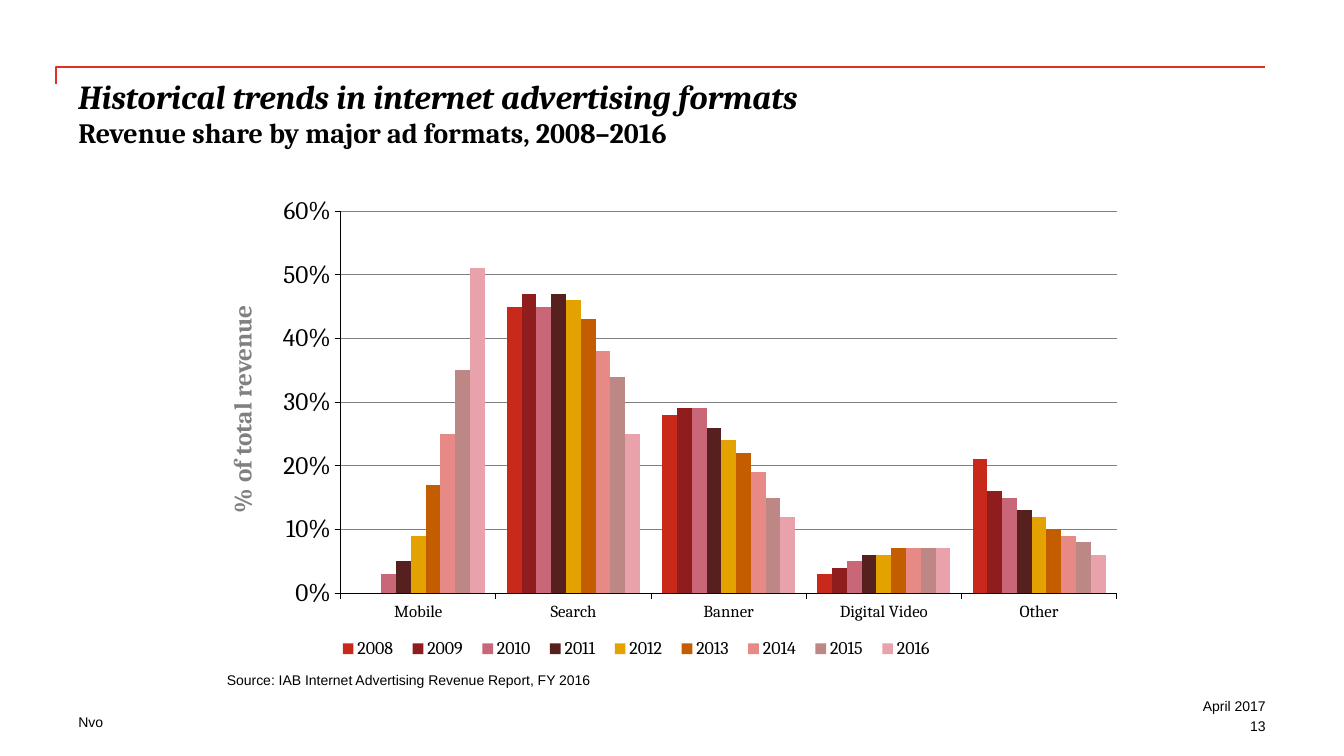
from dataclasses import dataclass

from lxml import etree
from pptx import Presentation
from pptx.chart.data import CategoryChartData
from pptx.dml.color import RGBColor
from pptx.enum.chart import XL_CHART_TYPE, XL_LEGEND_POSITION, XL_TICK_MARK
from pptx.enum.text import MSO_ANCHOR, PP_ALIGN
from pptx.oxml import parse_xml
from pptx.oxml.ns import nsdecls
from pptx.util import Emu, Inches, Pt

COLUMNS, ROWS = 160, 90
CELL = Inches(1 / 12)

BLACK = RGBColor(0x00, 0x00, 0x00)
GRAY = RGBColor(0x80, 0x80, 0x80)
RED = RGBColor(0xE0, 0x30, 0x1E)

LEFT, CENTER, RIGHT = PP_ALIGN.LEFT, PP_ALIGN.CENTER, PP_ALIGN.RIGHT
TOP, BOTTOM = MSO_ANCHOR.TOP, MSO_ANCHOR.BOTTOM
CLUSTERED = XL_CHART_TYPE.COLUMN_CLUSTERED
LEGEND_BOTTOM = XL_LEGEND_POSITION.BOTTOM
TICK_OUTSIDE, TICK_NONE = XL_TICK_MARK.OUTSIDE, XL_TICK_MARK.NONE


@dataclass(frozen=True)
class Area:
    """A rectangle in grid columns and rows."""
    column: float
    row: float
    width: float
    height: float

    def emu(self) -> list[Emu]:
        return [cells(n) for n in (self.column, self.row, self.width, self.height)]


@dataclass(frozen=True)
class Span:
    text: str
    size: float
    italic: bool = False


@dataclass(frozen=True)
class Label:
    area: Area
    spans: tuple[Span, ...]
    font: str = "Arial"
    color: RGBColor = BLACK
    bold: bool = False
    align: PP_ALIGN = LEFT
    anchor: MSO_ANCHOR = TOP
    rotation: float = 0


@dataclass(frozen=True)
class YearShares:
    year: str
    color: RGBColor
    shares: tuple[float | None, ...]


LABELS = (
    Label(Area(9.33, 9, 141.25, 12),
          (Span("Historical trends in internet advertising formats", 24, True),
           Span("Revenue share by major ad formats, 2008–2016", 20)),
          font="Cambria", bold=True),
    Label(Area(13, 46.7, 31.9, 4), (Span("% of total revenue", 18),),
          font="Cambria", color=GRAY, bold=True, align=CENTER, rotation=270),
    Label(Area(27, 80, 69, 2),
          (Span("Source: IAB Internet Advertising Revenue Report, FY 2016", 10),),
          anchor=BOTTOM),
    Label(Area(9.33, 85, 45.33, 2), (Span("Nvo", 10),)),
    Label(Area(124, 83, 26.67, 2), (Span("April 2017", 10),), align=RIGHT),
    Label(Area(124, 85.4, 26.67, 2), (Span("13", 10),), align=RIGHT),
)

RULE_POINTS = ((6.67, 10), (6.67, 8), (150.6, 8))

CHART_AREA = Area(27, 23, 106, 58)
PLOT_LAYOUT = (0.128, 0.037, 0.872, 0.784)
LEGEND_LAYOUT = (0.115, 0.9, 0.69, 0.07)
FORMATS = ("Mobile", "Search", "Banner", "Digital Video", "Other")
YEARS = (
    YearShares("2008", RGBColor(0xC8, 0x29, 0x1B), (None, 0.45, 0.28, 0.03, 0.21)),
    YearShares("2009", RGBColor(0x90, 0x1D, 0x1D), (None, 0.47, 0.29, 0.04, 0.16)),
    YearShares("2010", RGBColor(0xC9, 0x66, 0x78), (0.03, 0.45, 0.29, 0.05, 0.15)),
    YearShares("2011", RGBColor(0x55, 0x20, 0x1D), (0.05, 0.47, 0.26, 0.06, 0.13)),
    YearShares("2012", RGBColor(0xE3, 0xA2, 0x00), (0.09, 0.46, 0.24, 0.06, 0.12)),
    YearShares("2013", RGBColor(0xC4, 0x5D, 0x00), (0.17, 0.43, 0.22, 0.07, 0.10)),
    YearShares("2014", RGBColor(0xE7, 0x8A, 0x85), (0.25, 0.38, 0.19, 0.07, 0.09)),
    YearShares("2015", RGBColor(0xBD, 0x87, 0x85), (0.35, 0.34, 0.15, 0.07, 0.08)),
    YearShares("2016", RGBColor(0xE9, 0xA2, 0xAB), (0.51, 0.25, 0.12, 0.07, 0.06)),
)


def cells(count: float) -> Emu:
    return Emu(round(count * CELL))


def set_font(font, name: str, size: float) -> None:
    font.name, font.size = name, Pt(size)
    font.color.rgb = BLACK


def add_label(page, label: Label) -> None:
    box = page.shapes.add_textbox(*label.area.emu())
    box.rotation = label.rotation
    frame = box.text_frame
    frame.word_wrap = True
    frame.vertical_anchor = label.anchor
    frame.margin_left = frame.margin_right = frame.margin_top = frame.margin_bottom = 0
    para = frame.paragraphs[0]
    para.alignment = label.align
    para.font.name, para.font.bold = label.font, label.bold
    para.font.color.rgb = label.color
    for index, span in enumerate(label.spans):
        if index:
            para.add_line_break()
        run = para.add_run()
        run.text = span.text
        run.font.size, run.font.italic = Pt(span.size), span.italic


def add_corner_rule(page) -> None:
    start, *rest = [(cells(x), cells(y)) for x, y in RULE_POINTS]
    builder = page.shapes.build_freeform(*start)
    builder.add_line_segments(rest, close=False)
    rule = builder.convert_to_shape()
    rule.shadow.inherit = False
    rule.fill.background()
    rule.line.color.rgb = RED
    rule.line.width = Pt(1)


def layout_xml(shares: tuple[float, ...], inner: bool) -> etree.ElementBase:
    """Manual chart layout: left, top, width, height as shares of the chart."""
    target = '<c:layoutTarget val="inner"/>' if inner else ""
    modes = '<c:xMode val="edge"/><c:yMode val="edge"/>'
    sizes = "".join(f'<c:{tag} val="{share}"/>' for tag, share in zip("xywh", shares))
    return parse_xml(f'<c:layout {nsdecls("c")}><c:manualLayout>{target}{modes}{sizes}'
                     "</c:manualLayout></c:layout>")


def style_axis(axis, size: float) -> None:
    axis.major_tick_mark, axis.minor_tick_mark = TICK_OUTSIDE, TICK_NONE
    axis.format.line.color.rgb = BLACK
    axis.format.line.width = Pt(0.75)
    set_font(axis.tick_labels.font, "Cambria", size)


def add_share_chart(page) -> None:
    data = CategoryChartData(number_format="0%")
    data.categories = FORMATS
    for entry in YEARS:
        data.add_series(entry.year, entry.shares)
    chart = page.shapes.add_chart(CLUSTERED, *CHART_AREA.emu(), data).chart
    chart.has_title = False
    set_font(chart.font, "Arial", 14)

    plot = chart.plots[0]
    plot.gap_width, plot.overlap = 150, 0
    plot.vary_by_categories = False
    for series, entry in zip(plot.series, YEARS):
        series.format.fill.solid()
        series.format.fill.fore_color.rgb = entry.color

    style_axis(chart.category_axis, 12)
    values = chart.value_axis
    style_axis(values, 18)
    values.minimum_scale, values.maximum_scale, values.major_unit = 0, 0.6, 0.1
    values.tick_labels.number_format = "0%"
    values.tick_labels.number_format_is_linked = False
    values.major_gridlines.format.line.color.rgb = GRAY
    values.major_gridlines.format.line.width = Pt(0.75)

    chart.has_legend = True
    legend = chart.legend
    legend.position, legend.include_in_layout = LEGEND_BOTTOM, False
    set_font(legend.font, "Cambria", 12.8)

    area = chart.element.chart.plotArea
    for old in area.findall("{*}layout"):
        area.remove(old)
    area.insert(0, layout_xml(PLOT_LAYOUT, True))
    legend_xml = chart.element.chart.find("{*}legend")
    for old in legend_xml.findall("{*}layout"):
        legend_xml.remove(old)
    legend_xml.find("{*}legendPos").addnext(layout_xml(LEGEND_LAYOUT, False))


def main() -> None:
    deck = Presentation()
    deck.slide_width, deck.slide_height = cells(COLUMNS), cells(ROWS)
    page = deck.slides.add_slide(deck.slide_layouts[6])
    add_corner_rule(page)
    add_share_chart(page)
    for label in LABELS:
        add_label(page, label)
    deck.save("out.pptx")


if __name__ == "__main__":
    main()
